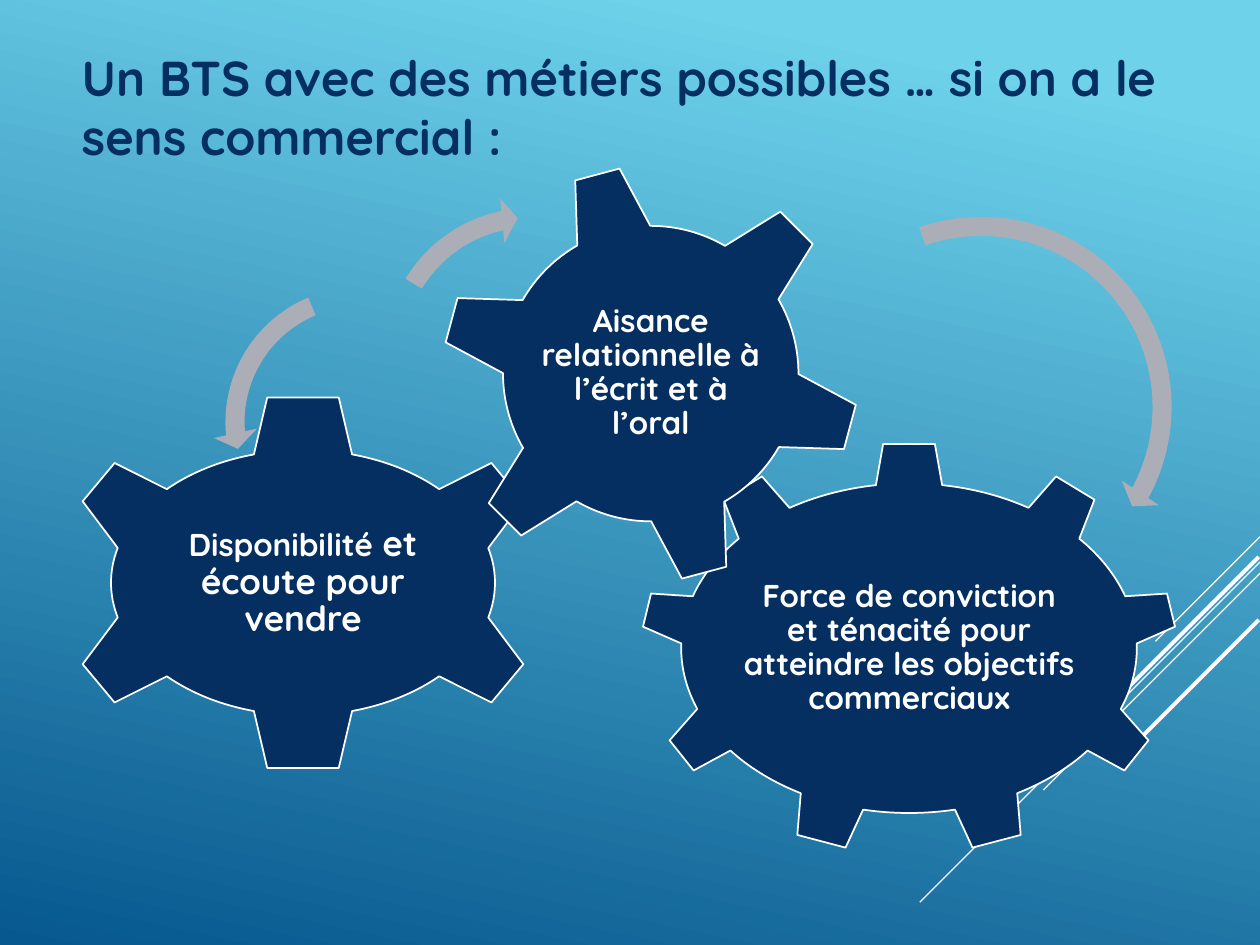
from lxml import etree
from pptx import Presentation
from pptx import util as u
from pptx.dml.color import RGBColor
from pptx.enum import shapes, text
from pptx.oxml.ns import qn

NAVY = RGBColor(0x05, 0x2F, 0x61)
WHITE = RGBColor(0xFF, 0xFF, 0xFF)
GREY = RGBColor(0xAB, 0xAD, 0xB7)
SKY = RGBColor(0x6E, 0xD2, 0xEB)
DEEP = RGBColor(0x06, 0x58, 0x8E)
FONT = "Quicksand"
KIND = shapes.MSO_SHAPE
COLS, ROWS = 10, 7.5
WIDE, HIGH = u.Inches(10), u.Inches(7.5)

RAYS = [
    (10, 4.26, 0.83, 0.75),
    (10, 4.46, 2.7, 0.75),
    (10, 4.55, 1.72, 0.75),
    (9.99, 4.42, 1.57, 2.25),
    (9.99, 4.92, 1.14, 2.25),
]
GEARS = [
    (KIND.GEAR_9, (4.68, 2.31, 4.27, 3.27), 0, (0.63, 0.51),
     [("Force de conviction et ténacité pour atteindre les objectifs commerciaux", 18)]),
    (KIND.GEAR_6, (0.03, 1.92, 3.95, 3.01), 0, (0.55, 0.49),
     [("Disponibilité", 18), (" et écoute pour vendre", 20)]),
    (KIND.GEAR_6, (3.09, 0.09, 3.35, 3.35), 345, (0.56, 0.56),
     [("Aisance relationnelle à l’écrit et à l’oral", 18)]),
]
ARROWS = [
    (KIND.CIRCULAR_ARROW, (5.78, 0.42, 3.22), 346.5,
     (0.047, 2.99, 25.161, 158.614, 0.055)),
    (KIND.LEFT_CIRCULAR_ARROW, (1.29, 0.98, 2.34), 0,
     (0.065, 4.3, 104.891, 148.378, 0.075)),
    (KIND.CIRCULAR_ARROW, (2.55, 0.35, 2.53), 36,
     (0.06, 3.941, 133.138, 105.082, 0.07)),
]


def grid(box, *cells):
    """Turn columns and rows counted from a box into slide lengths."""
    col, row = WIDE / COLS, HIGH / ROWS
    x, y, *size = cells
    spot = [int((box[0] + x) * col), int((box[1] + y) * row)]
    return spot + [int(n * unit) for n, unit in zip(size, (col, row))]


def style(run, size, color):
    """Set the look of one run."""
    run.font.name, run.font.size = FONT, u.Pt(size)
    run.font.bold, run.font.color.rgb = True, color


def back(slide):
    """Fill the background with a sky gradient."""
    fill = slide.background.fill
    fill.gradient()
    fill.gradient_angle = 360 - 102
    for stop, place, color in zip(fill.gradient_stops, (0.1, 1), (SKY, DEEP)):
        stop.position, stop.color.rgb = place, color


def rays(slide, box):
    """Draw the diagonal rays, all at 45 degrees."""
    for x, y, run, width in RAYS:
        start, end = grid(box, x, y), grid(box, x - run, y + run)
        line = slide.shapes.add_connector(shapes.MSO_CONNECTOR.STRAIGHT, *start, *end)
        line.line.color.rgb, line.line.width = WHITE, u.Pt(width)
        etree.SubElement(line._element.spPr, qn("a:effectLst"))


def title(slide, box):
    """Write the slide title across its box."""
    frame = slide.shapes.add_textbox(*grid(box, 0, 0, *box[2:])).text_frame
    frame.word_wrap = True
    frame.text = "Un BTS avec des métiers possibles … si on a le sens commercial :"
    style(frame.paragraphs[0].runs[0], 28, NAVY)


def label(slide, box, parts):
    """Write centred text in a box."""
    frame = slide.shapes.add_textbox(*grid(box, 0, 0, *box[2:])).text_frame
    frame.word_wrap = True
    frame.vertical_anchor = text.MSO_ANCHOR.MIDDLE
    frame.margin_left = frame.margin_right = u.Inches(0.03)
    frame.margin_top = frame.margin_bottom = u.Inches(0.03)
    para = frame.paragraphs[0]
    para.alignment, para.line_spacing = text.PP_ALIGN.CENTER, 0.9
    for words, size in parts:
        run = para.add_run()
        run.text = words
        style(run, size, WHITE)


def shape(slide, box, cells, kind, turn, color):
    """Add a flat, turned preset shape."""
    item = slide.shapes.add_shape(kind, *grid(box, *cells))
    item.shadow.inherit = False
    item.rotation = turn
    item.fill.solid()
    item.fill.fore_color.rgb = color
    return item


def gears(slide, box):
    """Place the labelled gears and the arrows that link them."""
    for kind, cells, turn, share, parts in GEARS:
        gear = shape(slide, box, cells, kind, turn, NAVY)
        gear.line.color.rgb, gear.line.width = WHITE, u.Pt(1)
        x, y, wide, high = cells
        w, h = wide * share[0], high * share[1]
        spot = (box[0] + x + (wide - w) / 2, box[1] + y + (high - h) / 2, w, h)
        label(slide, spot, parts)
    for kind, (x, y, size), turn, bends in ARROWS:
        arrow = shape(slide, box, (x, y, size, size), kind, turn, GREY)
        arrow.line.fill.background()
        for i, bend in enumerate(bends):
            arrow.adjustments[i] = bend


def main():
    """Build and save the slide."""
    deck = Presentation()
    deck.slide_width, deck.slide_height = WIDE, HIGH
    slide = deck.slides.add_slide(deck.slide_layouts[6])
    back(slide)
    rays(slide, (0, 0, COLS, ROWS))
    title(slide, (0.55, 0.33, 9.45, 1.04))
    gears(slide, (0.4, 1.2, 9, 5.6))
    deck.save("out.pptx")


if __name__ == "__main__":
    main()
